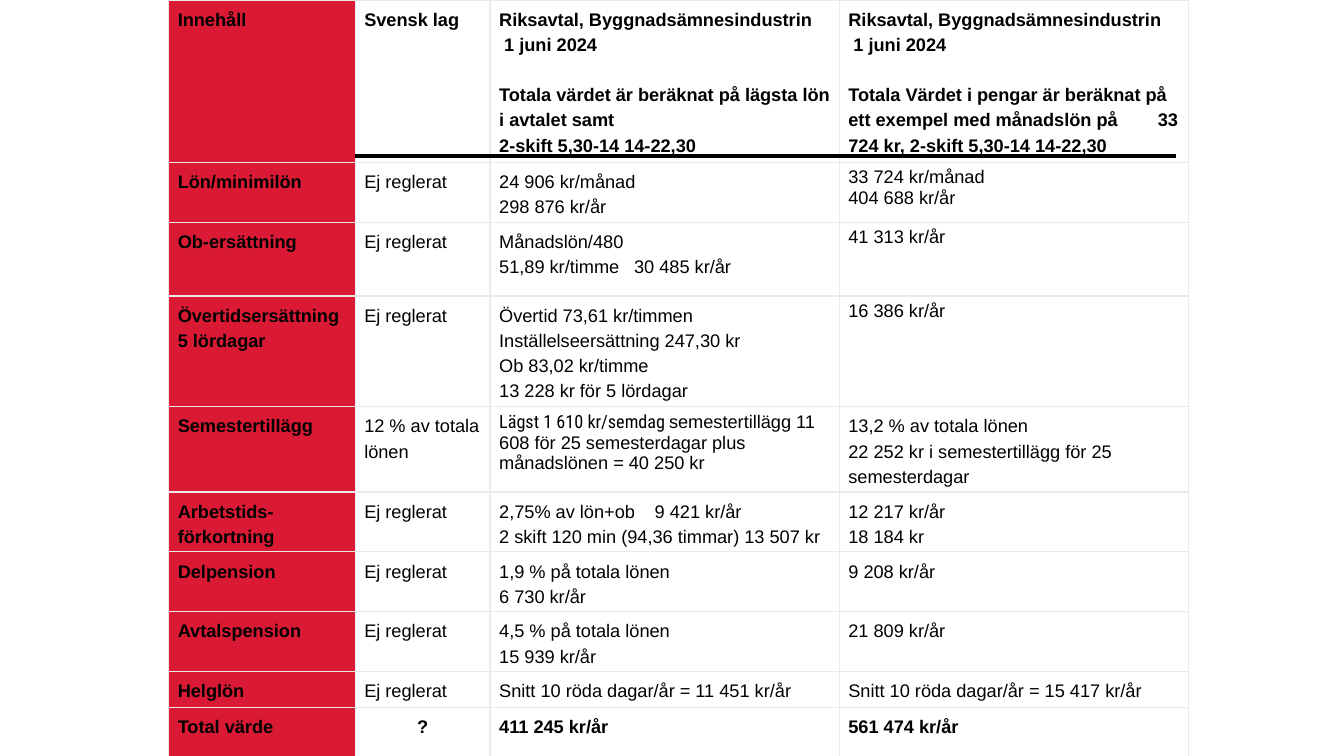
from lxml import etree
from pptx import Presentation
from pptx.dml.color import RGBColor
from pptx.enum.shapes import MSO_CONNECTOR as Connector
from pptx.enum.text import PP_ALIGN as Align
from pptx.oxml import parse_xml
from pptx.oxml.ns import nsdecls, qn
from pptx.util import Cm, Pt

BLACK = RGBColor(0x00, 0x00, 0x00)
WHITE = RGBColor(0xFF, 0xFF, 0xFF)
RED = RGBColor(0xDA, 0x1A, 0x35)
GRID = RGBColor(0xEA, 0xEA, 0xEA)

UNREGULATED = ["Ej reglerat"]
AGREEMENT = ["Riksavtal, Byggnadsämnesindustrin", " 1 juni 2024"]
ROWS = [
    (4.1, ["Innehåll"], ["Svensk lag"],
     AGREEMENT + ["Totala värdet är beräknat på lägsta lön i avtalet samt",
                  "2-skift 5,30-14 14-22,30"],
     AGREEMENT + ["Totala Värdet i pengar är beräknat på ett exempel med "
                  "månadslön på\t33 724 kr, 2-skift 5,30-14 14-22,30"]),
    (1.51, ["Lön/minimilön"], UNREGULATED,
     ["24 906 kr/månad", "298 876 kr/år"],
     ["33 724 kr/månad", "404 688 kr/år"]),
    (1.85, ["Ob-ersättning"], UNREGULATED,
     ["Månadslön/480", "51,89 kr/timme\t30 485 kr/år"],
     ["41 313 kr/år"]),
    (2.79, ["Övertidsersättning", "5 lördagar"], UNREGULATED,
     ["Övertid 73,61 kr/timmen", "Inställelseersättning 247,30 kr",
      "Ob 83,02 kr/timme", "13 228 kr för 5 lördagar"],
     ["16 386 kr/år"]),
    (2.14, ["Semestertillägg"], ["12 % av totala lönen"],
     [("Lägst 1 610 kr/semdag ",
       "semestertillägg 11 608 för 25 semesterdagar plus månadslönen = 40 250 kr")],
     ["13,2 % av totala lönen", "22 252 kr i semestertillägg för 25 semesterdagar"]),
    (1.51, ["Arbetstids-förkortning"], UNREGULATED,
     ["2,75% av lön+ob\t9 421 kr/år", "2 skift 120 min (94,36 timmar) 13 507 kr"],
     ["12 217 kr/år", "18 184 kr"]),
    (1.51, ["Delpension"], UNREGULATED,
     ["1,9 % på totala lönen", "6 730 kr/år"], ["9 208 kr/år"]),
    (1.51, ["Avtalspension"], UNREGULATED,
     ["4,5 % på totala lönen", "15 939 kr/år"], ["21 809 kr/år"]),
    (0.9, ["Helglön"], UNREGULATED,
     ["Snitt 10 röda dagar/år = 11 451 kr/år"],
     ["Snitt 10 röda dagar/år = 15 417 kr/år"]),
    (1.3, ["Total värde"], ["?"], ["411 245 kr/år"], ["561 474 kr/år"]),
]
COLUMN_WIDTHS = [4.7, 3.4, 8.8, 8.8]
SINGLE_SPACED = {(1, 3), (2, 3), (3, 3), (4, 2)}
TAB_STOPS = {(0, 3): 7.8, (2, 2): 3.4, (5, 2): 3.92}
TABLE_LEFT = 4.25


def add_borders(cell):
    for side in ("lnL", "lnR", "lnT", "lnB"):
        cell._tc.get_or_add_tcPr().append(parse_xml(
            f'<a:{side} {nsdecls("a")} w="{Pt(1)}"><a:solidFill>'
            f'<a:srgbClr val="{GRID}"/></a:solidFill></a:{side}>'))


def add_tab_stop(paragraph, position):
    stops = etree.SubElement(paragraph._p.get_or_add_pPr(), qn("a:tabLst"))
    etree.SubElement(stops, qn("a:tab"), pos=str(Cm(position)), algn="l")


def write_line(paragraph, line, place, bold):
    if place not in SINGLE_SPACED:
        paragraph.line_spacing = Pt(18)
    if line == "?":
        paragraph.alignment = Align.CENTER
    if line[0:6] == "Totala":
        paragraph.space_before = Pt(18)
    if "\t" in line:
        add_tab_stop(paragraph, TAB_STOPS[place])
    font = paragraph.font
    font.size, font.bold = Pt(13), bold
    font.color.rgb = BLACK
    if isinstance(line, tuple):
        for text, face in zip(line, ("Roboto Condensed", "Arial")):
            run = paragraph.add_run()
            run.text, run.font.name = text, face
    else:
        font.name = "Arial"
        paragraph.add_run().text = line


def fill_cell(cell, lines, place):
    row, column = place
    add_borders(cell)
    cell.fill.solid()
    cell.fill.fore_color.rgb = WHITE if column else RED
    cell.margin_left = cell.margin_right = Cm(0.23)
    cell.margin_top = cell.margin_bottom = Cm(0.12)
    bold = column == 0 or row in (0, len(ROWS) - 1)
    frame = cell.text_frame
    for index, line in enumerate(lines):
        paragraph = frame.add_paragraph() if index else frame.paragraphs[0]
        write_line(paragraph, line, place, bold)


def main():
    deck = Presentation()
    deck.slide_width, deck.slide_height = Cm(33.87), Cm(19.05)
    slide = deck.slides.add_slide(deck.slide_layouts[6])

    comparison = slide.shapes.add_table(
        len(ROWS), len(COLUMN_WIDTHS), Cm(TABLE_LEFT), Cm(0),
        Cm(sum(COLUMN_WIDTHS)), Cm(sum(row[0] for row in ROWS))).table
    comparison.first_row = comparison.horz_banding = False
    for column, width in zip(comparison.columns, COLUMN_WIDTHS):
        column.width = Cm(width)
    for r, (height, *cells) in enumerate(ROWS):
        comparison.rows[r].height = Cm(height)
        for c, lines in enumerate(cells):
            fill_cell(comparison.cell(r, c), lines, (r, c))

    header_rule = slide.shapes.add_connector(
        Connector.STRAIGHT, Cm(8.94), Cm(3.94), Cm(29.64), Cm(3.94))
    header_rule.line.color.rgb = BLACK
    header_rule.line.width = Pt(3)
    etree.SubElement(header_rule._element.spPr, qn("a:effectLst"))

    deck.save("out.pptx")


if __name__ == "__main__":
    main()
